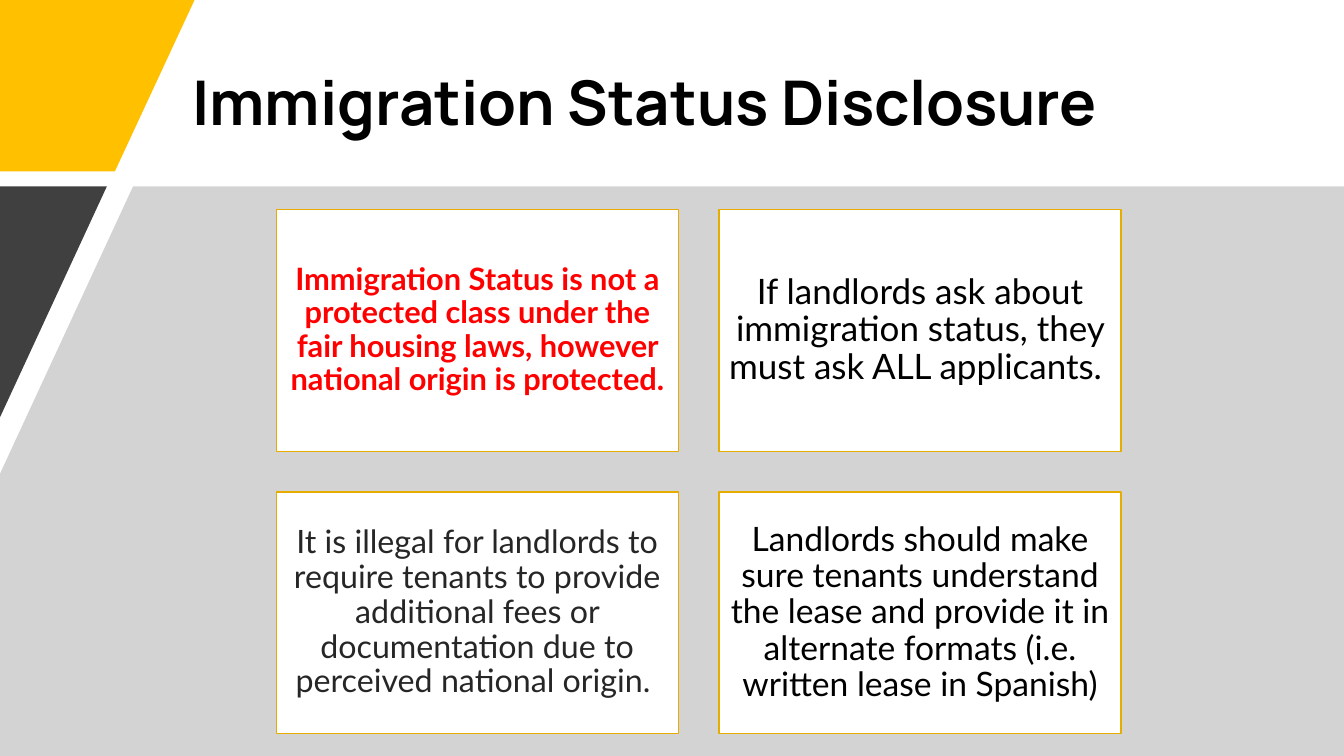
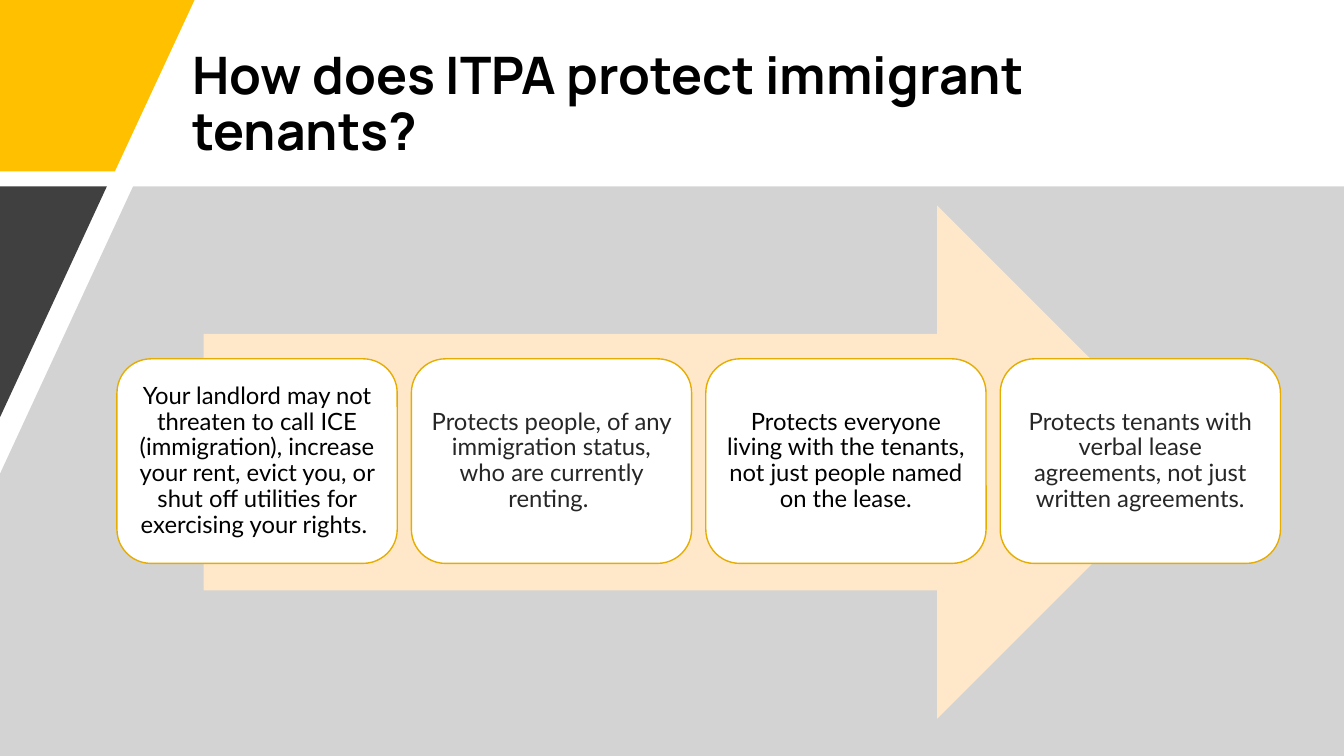
"""Build two slides on immigration status and tenant protection."""
from dataclasses import dataclass

from lxml import etree
from pptx import Presentation
from pptx.dml.color import RGBColor
from pptx.enum.shapes import MSO_SHAPE as SHAPE
from pptx.enum.text import MSO_ANCHOR as ANCHOR, PP_ALIGN as ALIGN
from pptx.oxml.ns import qn
from pptx.util import Inches, Pt


@dataclass(frozen=True)
class Theme:
    yellow: str = "FFC000"
    grey: str = "A6A6A6"
    dark: str = "404040"
    white: str = "FFFFFF"
    border: str = "E6AD00"
    arrow: str = "FFE8CA"
    black: str = "000000"
    soft: str = "262626"
    red: str = "FF0000"
    title_font: str = "Manrope"
    body_font: str = "Lato"
    title_size: float = 44
    long_title_size: float = 36.9
    step_size: float = 17


T = Theme()
WIDTH, HEIGHT = 13.33, 7.5

DISCLOSURE_TITLE = "Immigration Status Disclosure"
DISCLOSURE_CARDS = [
    ("Immigration Status is not a protected class under the fair housing laws, "
     "however national origin is protected.", 22, T.red, True),
    ("If landlords ask about immigration status, they must ask ALL applicants. ",
     25, T.black, False),
    ("It is illegal for landlords to require tenants to provide additional fees or "
     "documentation due to perceived national origin. ", 23, T.soft, False),
    ("Landlords should make sure tenants understand the lease and provide it in "
     "alternate formats (i.e. written lease in Spanish)", 24, T.black, False),
]

PROTECTION_TITLE = "How does ITPA protect immigrant tenants?"
PROTECTION_STEPS = [
    ("Your landlord may not threaten to call ICE (immigration), increase your rent, "
     "evict you, or shut off utilities for exercising your rights. ", T.black),
    ("Protects people, of any immigration status, who are currently renting. ", T.soft),
    ("Protects everyone living with the tenants, not just people named on the lease.",
     T.black),
    ("Protects tenants with verbal lease agreements, not just written agreements.",
     T.soft),
]

BACKDROP = [
    ([(0, 0), (1.93, 0), (1.14, 1.7), (0, 1.7)], T.yellow, None),
    ([(1.32, 1.85), (WIDTH, 1.85), (WIDTH, HEIGHT), (0, HEIGHT), (0, 4.7)], T.grey, 49),
    ([(0, 1.85), (1.06, 1.85), (0, 4.14)], T.dark, None),
]


def paint(sp, fill, line=None, opacity=None):
    sp.shadow.inherit = False
    sp.fill.solid()
    sp.fill.fore_color.rgb = RGBColor.from_string(fill)
    if opacity is not None:
        color = sp.fill._xPr.find(qn("a:solidFill"))[0]
        etree.SubElement(color, qn("a:alpha"), val=str(opacity * 1000))
    if line:
        sp.line.color.rgb = RGBColor.from_string(line)
        sp.line.width = Pt(1)
    else:
        sp.line.fill.background()


def write(sp, text, font, size, color, bold=False, align=ALIGN.CENTER, inset=(0.1, 0.1)):
    tf = sp.text_frame
    tf.word_wrap = True
    tf.vertical_anchor = ANCHOR.MIDDLE
    tf.margin_left = tf.margin_right = Inches(inset[0])
    tf.margin_top = tf.margin_bottom = Inches(inset[1])
    p = tf.paragraphs[0]
    p.alignment = align
    p.line_spacing = 0.9
    r = p.add_run()
    r.text = text
    r.font.name = font
    r.font.size = Pt(size)
    r.font.bold = bold
    r.font.color.rgb = RGBColor.from_string(color)


def add_block(slide, kind, box, fill, line=None):
    sp = slide.shapes.add_shape(kind, *map(Inches, box))
    paint(sp, fill, line)
    return sp


def add_base_slide(prs, title, size):
    slide = prs.slides.add_slide(prs.slide_layouts[6])
    for points, fill, opacity in BACKDROP:
        start, *rest = [(Inches(x), Inches(y)) for x, y in points]
        builder = slide.shapes.build_freeform(*start)
        builder.add_line_segments(rest, close=True)
        paint(builder.convert_to_shape(), fill, opacity=opacity)
    box = slide.shapes.add_textbox(*map(Inches, (1.81, 0.4, 10.24, 1.3)))
    write(box, title, T.title_font, size, T.black, True, ALIGN.LEFT, (0.1, 0.05))
    return slide


def add_disclosure(prs):
    slide = add_base_slide(prs, DISCLOSURE_TITLE, T.title_size)
    left, top, width, height, gap = 2.74, 2.08, 3.99, 2.4, 0.4
    for i, (text, size, color, bold) in enumerate(DISCLOSURE_CARDS):
        row, col = divmod(i, 2)
        box = left + col * (width + gap), top + row * (height + gap), width, height
        card = add_block(slide, SHAPE.RECTANGLE, box, T.white, T.border)
        write(card, text, T.body_font, size, color, bold)


def add_protection(prs):
    slide = add_base_slide(prs, PROTECTION_TITLE, T.long_title_size)
    add_block(slide, SHAPE.RIGHT_ARROW, (2.02, 2.04, 9.82, 5.09), T.arrow)
    left, top, width, height, gap = 1.16, 3.56, 2.78, 2.03, 0.14
    for i, (text, color) in enumerate(PROTECTION_STEPS):
        box = left + i * (width + gap), top, width, height
        step = add_block(slide, SHAPE.ROUNDED_RECTANGLE, box, T.white, T.border)
        write(step, text, T.body_font, T.step_size, color, inset=(0.07, 0.07))


def main():
    prs = Presentation()
    prs.slide_width, prs.slide_height = Inches(WIDTH), Inches(HEIGHT)
    add_disclosure(prs)
    add_protection(prs)
    prs.save("out.pptx")


if __name__ == "__main__":
    main()
